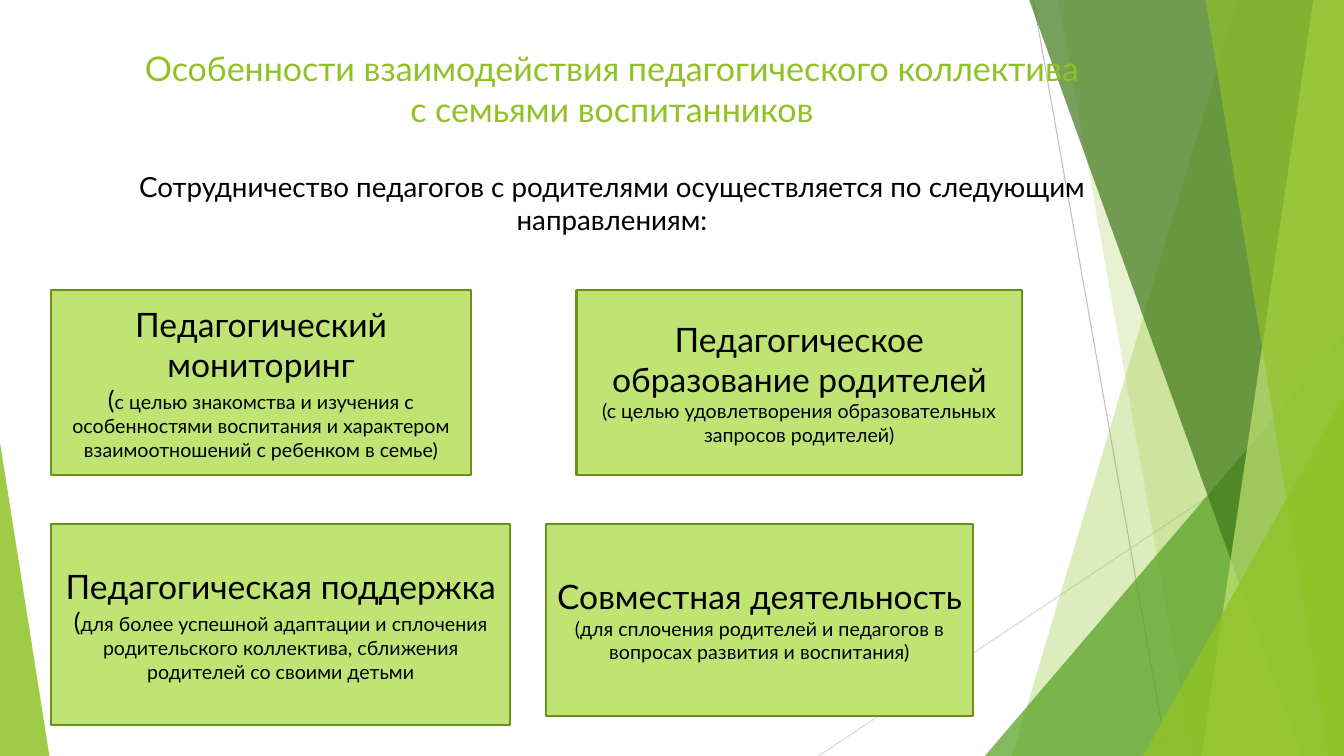
import pptx
import pptx.util
import pptx.dml.color
import pptx.enum.shapes
import pptx.enum.text
import pptx.oxml.ns
from lxml import etree

RGBColor = pptx.dml.color.RGBColor
LIME = RGBColor(0x90, 0xC2, 0x26)
PALE = RGBColor(0xC0, 0xE4, 0x74)
GREEN = RGBColor(0x54, 0xA0, 0x21)
FOREST = RGBColor(0x3F, 0x78, 0x19)
OLIVE = RGBColor(0x6B, 0x90, 0x1C)
BLACK = RGBColor(0, 0, 0)
GREY = RGBColor(0xBF, 0xBF, 0xBF)
LIGHT_GREY = RGBColor(0xD9, 0xD9, 0xD9)

FONT = "Lato"
W, H = pptx.util.Inches(13.33), pptx.util.Inches(7.5)

# Boxes are left, top, width, height in percent of the slide.
TITLE_BOX = (9.23, 5.6, 72.6, 26)
CARDS = [
    ((3.83, 38.4, 31.2, 24.4), "Педагогический мониторинг",
     [("(", 18), ("с целью знакомства и изучения с особенностями воспитания и "
                  "характером взаимоотношений с ребенком в семье)", 14)]),
    ((3.83, 69.33, 34.13, 26.53), "Педагогическая поддержка",
     [("(", 18), ("для более успешной адаптации и сплочения родительского "
                  "коллектива, сближения родителей со своими детьми", 14)]),
    ((42.9, 38.4, 33.15, 24.4), "Педагогическое образование родителей",
     [("(с целью удовлетворения образовательных запросов родителей)", 14)]),
    ((40.65, 69.33, 31.73, 25.33), "Совместная деятельность",
     [("(для сплочения родителей и педагогов в вопросах развития и "
       "воспитания)", 14)]),
]


def col(share):
    return round(W * share / 100)


def row(share):
    return round(H * share / 100)


def place(box):
    left, top, width, height = box
    return col(left), row(top), col(width), row(height)


def tint(sp, color, alpha):
    """Fill without outline, at the given opacity in percent."""
    sp.shadow.inherit = False
    sp.line.fill.background()
    sp.fill.solid()
    sp.fill.fore_color.rgb = color
    clr = sp.fill._xPr.find(".//" + pptx.oxml.ns.qn("a:srgbClr"))
    etree.SubElement(clr, pptx.oxml.ns.qn("a:alpha"), val=str(alpha * 1000))


def add_ray(s, start, end, color):
    line = s.shapes.add_connector(
        pptx.enum.shapes.MSO_CONNECTOR.STRAIGHT,
        col(start[0]), row(start[1]), col(end[0]), row(end[1]))
    line.line.color.rgb = color
    line.line.width = pptx.util.Pt(0.75)
    etree.SubElement(line._element.spPr, pptx.oxml.ns.qn("a:effectLst"))


def add_facet(s, top_x, bottom_x, color, alpha):
    """Full-height band from a slanted left edge to the slide's right edge."""
    fb = s.shapes.build_freeform(col(top_x), 0)
    fb.add_line_segments([(W, 0), (W, H), (col(bottom_x), H)], close=True)
    tint(fb.convert_to_shape(), color, alpha)


def add_corner(s, left, top, width, apex, color, alpha):
    """Right triangle on the bottom edge; apex is 0 for left, 1 for right."""
    sp = s.shapes.add_shape(
        pptx.enum.shapes.MSO_SHAPE.ISOSCELES_TRIANGLE,
        *place((left, top, width, 100 - top)))
    sp.adjustments[0] = apex
    tint(sp, color, alpha)


def add_background(s):
    add_ray(s, (76.88, 0), (86.85, 100), GREY)
    add_ray(s, (100, 53.73), (60.9, 100), LIGHT_GREY)
    add_facet(s, 92.1, 75.3, LIME, 30)
    add_facet(s, 78.75, 88.73, LIME, 20)
    add_corner(s, 73.28, 44.4, 26.72, 1, GREEN, 72)
    add_facet(s, 76.58, 96.83, FOREST, 70)
    add_facet(s, 97.73, 89.4, PALE, 70)
    add_facet(s, 89.7, 98.85, LIME, 65)
    add_corner(s, 85.05, 52.4, 14.95, 1, LIME, 80)
    add_corner(s, 0, 58.53, 3.68, 0, LIME, 85)


def write(p, runs, color=BLACK):
    p.alignment = pptx.enum.text.PP_ALIGN.CENTER
    for text, size in runs:
        r = p.add_run()
        r.text = text
        r.font.name = FONT
        r.font.size = pptx.util.Pt(size)
        r.font.color.rgb = color


def add_title(s, box):
    tf = s.shapes.add_textbox(*place(box)).text_frame
    tf.word_wrap = True
    write(tf.paragraphs[0],
          [("Особенности взаимодействия педагогического коллектива "
            "с семьями воспитанников", 24.3)], LIME)
    p = tf.add_paragraph()
    p.space_before = pptx.util.Pt(29)
    write(p, [("Сотрудничество педагогов с родителями осуществляется "
               "по следующим направлениям:", 19.8)])


def add_card(s, box, heading, details):
    sp = s.shapes.add_shape(
        pptx.enum.shapes.MSO_SHAPE.RECTANGLE, *place(box))
    sp.shadow.inherit = False
    sp.fill.solid()
    sp.fill.fore_color.rgb = PALE
    sp.line.color.rgb = OLIVE
    sp.line.width = pptx.util.Pt(1.5)
    tf = sp.text_frame
    tf.word_wrap = True
    tf.vertical_anchor = pptx.enum.text.MSO_ANCHOR.MIDDLE
    write(tf.paragraphs[0], [(heading, 24)])
    write(tf.add_paragraph(), details)


def main():
    prs = pptx.Presentation()
    prs.slide_width, prs.slide_height = W, H
    s = prs.slides.add_slide(prs.slide_layouts[6])
    add_background(s)
    add_title(s, TITLE_BOX)
    for box, heading, details in CARDS:
        add_card(s, box, heading, details)
    prs.save("out.pptx")


if __name__ == "__main__":
    main()
